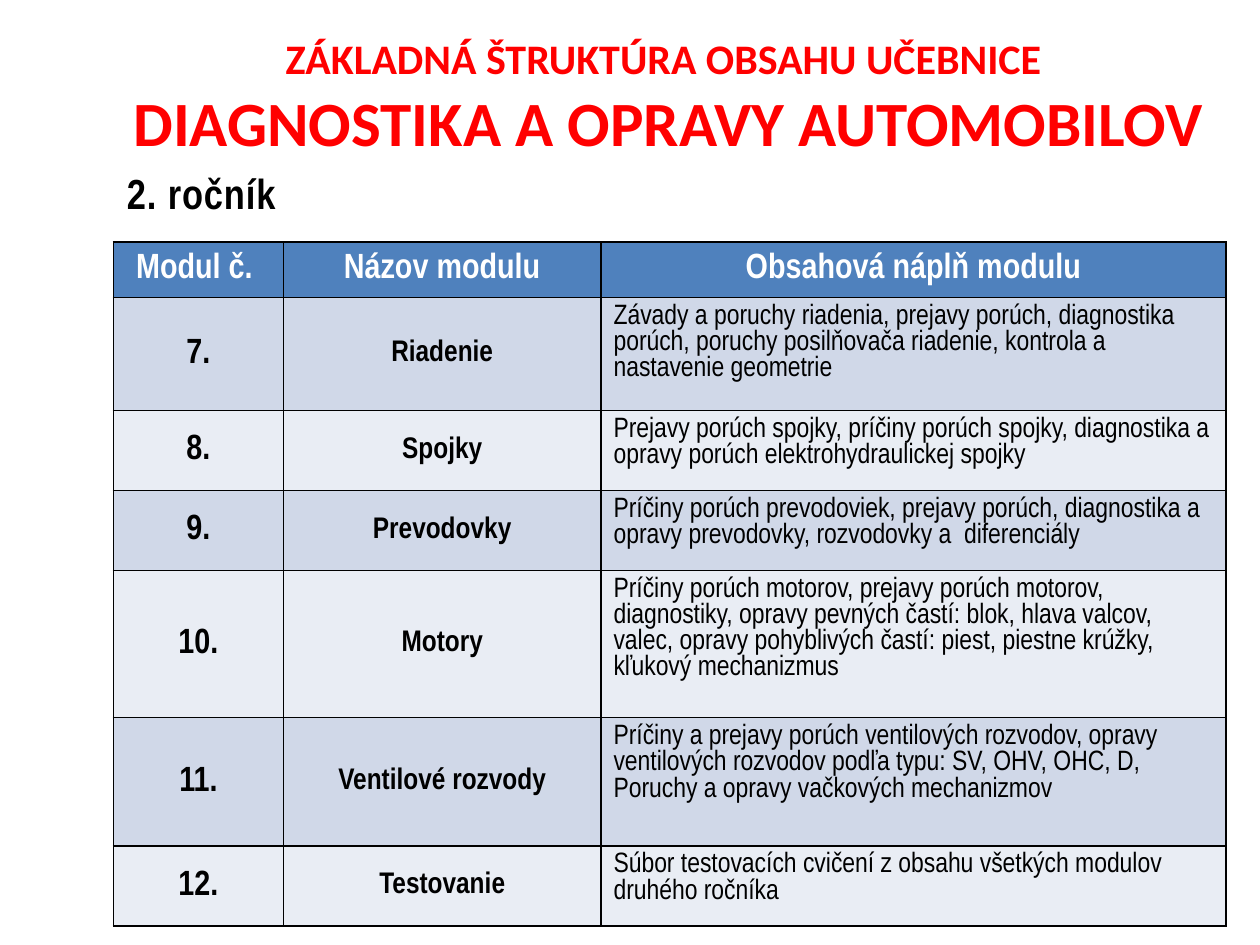
from typing import NamedTuple

from lxml.etree import SubElement
from pptx import Presentation
from pptx.dml.color import RGBColor
from pptx.enum.text import MSO_ANCHOR as Anchor, PP_ALIGN as Align
from pptx.oxml.ns import qn
from pptx.util import Inches, Pt

COLORS = {
    "title": "FF0000",
    "text": "000000",
    "light": "FFFFFF",
    "head": "4F81BD",
    "odd": "D0D8E8",
    "even": "E9EDF4",
    "line": "000000",
}
NARROW = "Arial Narrow"


class Style(NamedTuple):
    size: int
    color: str = "text"
    bold: bool = True
    align: Align = Align.CENTER
    face: str = NARROW


class Module(NamedTuple):
    number: str
    name: str
    topics: str
    height: float


HEAD = Style(20, "light")
COLUMNS = [
    (1.35, "Modul č. ", Style(20)),
    (2.52, "Názov modulu", Style(17)),
    (4.96, "Obsahová náplň modulu", Style(16, bold=False, align=Align.LEFT)),
]
HEAD_HEIGHT = 0.44
MODULES = [
    Module("7.", "Riadenie",
           "Závady a poruchy riadenia, prejavy porúch, diagnostika porúch, "
           "poruchy posilňovača riadenie, kontrola a nastavenie geometrie", 0.9),
    Module("8.", "Spojky",
           "Prejavy porúch spojky, príčiny porúch spojky, diagnostika a "
           "opravy porúch elektrohydraulickej spojky", 0.63),
    Module("9.", "Prevodovky",
           "Príčiny porúch prevodoviek, prejavy porúch, diagnostika a "
           "opravy prevodovky, rozvodovky a  diferenciály", 0.63),
    Module("10.", "Motory",
           "Príčiny porúch motorov, prejavy porúch motorov, diagnostiky, "
           "opravy pevných častí: blok, hlava valcov, valec, opravy pohyblivých "
           "častí: piest, piestne krúžky, kľukový mechanizmus", 1.17),
    Module("11.", "Ventilové rozvody",
           "Príčiny a prejavy porúch ventilových rozvodov, opravy ventilových "
           "rozvodov podľa typu: SV, OHV, OHC, D,\n"
           "Poruchy a opravy vačkových mechanizmov", 1.02),
    Module("12.", "Testovanie",
           "Súbor testovacích cvičení z obsahu všetkých modulov "
           "druhého ročníka", 0.63),
]


def rgb(name: str) -> RGBColor:
    return RGBColor.from_string(COLORS[name])


def set_style(para, style: Style) -> None:
    para.alignment = style.align
    font = para.font
    font.name, font.size, font.bold = style.face, Pt(style.size), style.bold
    font.color.rgb = rgb(style.color)


def add_text(slide, box: tuple, lines: list[tuple[str, Style]]):
    frame = slide.shapes.add_textbox(*map(Inches, box)).text_frame
    frame.word_wrap = True
    frame.text = "\n".join(text for text, _ in lines)
    for para, (_, style) in zip(frame.paragraphs, lines):
        set_style(para, style)
    return frame


def add_border(cell) -> None:
    """Draw a thin line on all four sides; must run before the fill is set."""
    props = cell._tc.get_or_add_tcPr()
    for side in ("lnL", "lnR", "lnT", "lnB"):
        line = SubElement(props, qn(f"a:{side}"), w=str(Pt(1)))
        fill = SubElement(line, qn("a:solidFill"))
        SubElement(fill, qn("a:srgbClr"), val=COLORS["line"])


def fill_cell(cell, text: str, style: Style, color: str) -> None:
    add_border(cell)
    cell.fill.solid()
    cell.fill.fore_color.rgb = rgb(color)
    centred = style.align == Align.CENTER
    cell.vertical_anchor = Anchor.MIDDLE if centred else Anchor.TOP
    cell.text = text
    for para in cell.text_frame.paragraphs:
        set_style(para, style)


def add_modules(slide, left: float, top: float) -> None:
    heights = [HEAD_HEIGHT] + [module.height for module in MODULES]
    width = sum(column[0] for column in COLUMNS)
    size = map(Inches, (left, top, width, sum(heights)))
    table = slide.shapes.add_table(len(heights), len(COLUMNS), *size).table
    for row, height in zip(table.rows, heights):
        row.height = Inches(height)
    for col, (wide, title, style) in enumerate(COLUMNS):
        table.columns[col].width = Inches(wide)
        fill_cell(table.cell(0, col), title, HEAD, "head")
        for row, module in enumerate(MODULES, 1):
            color = "odd" if row % 2 else "even"
            fill_cell(table.cell(row, col), module[col], style, color)


def main() -> None:
    deck = Presentation()
    deck.slide_width, deck.slide_height = Inches(10), Inches(7.5)
    slide = deck.slides.add_slide(deck.slide_layouts[6])

    add_text(slide, (0.74, 0.21, 9.13, 1.11), [
        ("ZÁKLADNÁ ŠTRUKTÚRA OBSAHU UČEBNICE ", Style(24, "title", face="Calibri")),
        ("DIAGNOSTIKA A OPRAVY AUTOMOBILOV", Style(36, "title", face="Calibri")),
    ])
    add_modules(slide, 0.9, 1.92)
    grade = add_text(slide, (0.91, 1.28, 2.63, 0.5),
                     [("2. ročník", Style(24, align=Align.LEFT))])
    grade.paragraphs[0].runs[0]._r.get_or_add_rPr().set("spc", "50")

    deck.save("out.pptx")


if __name__ == "__main__":
    main()
